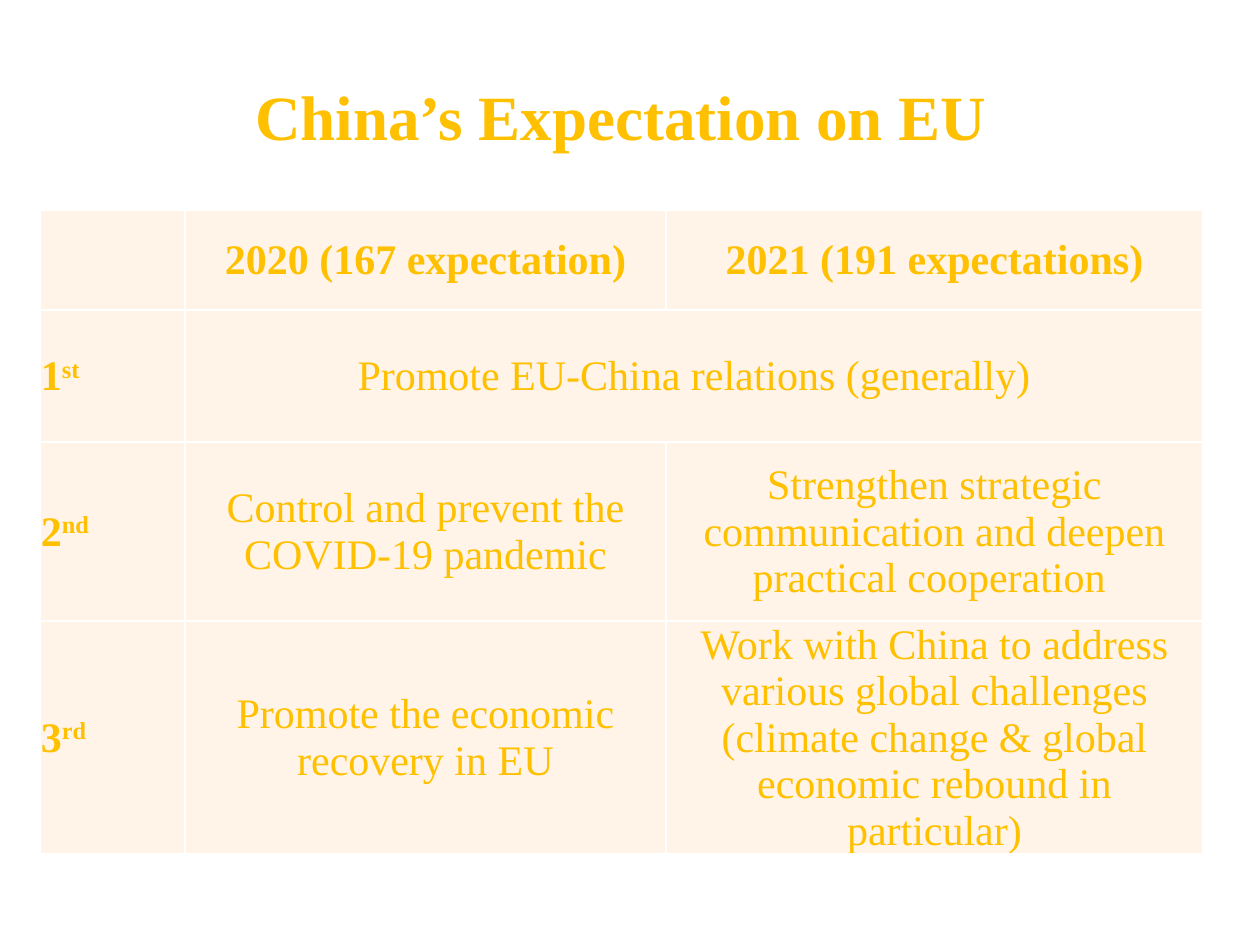
from dataclasses import dataclass

from lxml import etree
from pptx import Presentation
from pptx import util as u
from pptx.dml.color import RGBColor
from pptx.enum import text
from pptx.oxml.ns import qn

EMU_PER_PX = 914400 / 126


@dataclass(frozen=True)
class Theme:
    font: str = "Times New Roman"
    ink: str = "FFC000"
    cell: str = "FFF4E7"
    border: str = "FFFFFF"
    title_size: int = 36
    table_size: int = 24


THEME = Theme()
COLUMNS = [145, 481, 537]
ROWS = [100, 132, 179, 163]
HEADERS = ["2020 (167 expectation)", "2021 (191 expectations)"]
RANKS = [
    ("1", "st", ["Promote EU-China relations (generally)"]),
    ("2", "nd", ["Control and prevent the COVID-19 pandemic",
                 "Strengthen strategic communication and deepen practical cooperation "]),
    ("3", "rd", ["Promote the economic recovery in EU",
                 "Work with China to address various global challenges "
                 "(climate change & global economic rebound in particular)"]),
]


def px(n):
    return u.Emu(round(n * EMU_PER_PX))


def set_all(obj, values):
    for name, value in values.items():
        setattr(obj, name, value)


def add_run(p, words, size, bold, raised=False):
    r = p.add_run()
    r.text = words
    set_all(r.font, {"name": THEME.font, "size": u.Pt(size), "bold": bold})
    r.font.color.rgb = RGBColor.from_string(THEME.ink)
    if raised:
        r.font._element.set("baseline", "30000")


def add_title(s, words):
    sp = s.shapes.title
    set_all(sp, {"left": px(31), "top": px(60), "width": px(1180), "height": px(120)})
    tf = sp.text_frame
    set_all(tf, {"vertical_anchor": text.MSO_ANCHOR.MIDDLE, "word_wrap": True})
    p = tf.paragraphs[0]
    set_all(p, {"alignment": text.PP_ALIGN.CENTER, "line_spacing": 0.9})
    add_run(p, words, THEME.title_size, True)


def add_borders(cell):
    tcPr = cell._tc.get_or_add_tcPr()
    for i, side in enumerate(("lnL", "lnR", "lnT", "lnB")):
        ln = etree.Element(qn(f"a:{side}"), w=str(u.Pt(1)))
        fill = etree.SubElement(ln, qn("a:solidFill"))
        etree.SubElement(fill, qn("a:srgbClr"), val=THEME.border)
        tcPr.insert(i, ln)


def format_cell(cell):
    set_all(cell, {
        "margin_left": px(1), "margin_right": px(1),
        "margin_top": px(1), "margin_bottom": 0,
        "vertical_anchor": text.MSO_ANCHOR.MIDDLE,
    })
    cell.fill.solid()
    cell.fill.fore_color.rgb = RGBColor.from_string(THEME.cell)
    add_borders(cell)


def write_centred(cell, words, bold=False):
    p = cell.text_frame.paragraphs[0]
    p.alignment = text.PP_ALIGN.CENTER
    add_run(p, words, THEME.table_size, bold)


def write_rank(cell, number, suffix):
    p = cell.text_frame.paragraphs[0]
    add_run(p, number, THEME.table_size, True)
    add_run(p, suffix, THEME.table_size, True, raised=True)


def add_expectations(s):
    frame = s.shapes.add_table(len(ROWS), len(COLUMNS), px(40), px(210),
                               px(sum(COLUMNS)), px(sum(ROWS)))
    table = frame.table
    set_all(table, {"first_row": False, "horz_banding": False})
    for column, width in zip(table.columns, COLUMNS):
        column.width = px(width)
    for row, height in zip(table.rows, ROWS):
        row.height = px(height)
    for cell in table.iter_cells():
        format_cell(cell)
    for col, words in enumerate(HEADERS, 1):
        write_centred(table.cell(0, col), words, bold=True)
    for row, (number, suffix, entries) in enumerate(RANKS, 1):
        write_rank(table.cell(row, 0), number, suffix)
        if len(entries) == 1:
            table.cell(row, 1).merge(table.cell(row, 2))
        for col, words in enumerate(entries, 1):
            write_centred(table.cell(row, col), words)


def main():
    prs = Presentation()
    set_all(prs, {"slide_width": px(1260), "slide_height": px(945)})
    s = prs.slides.add_slide(prs.slide_layouts[5])
    add_title(s, "China’s Expectation on EU")
    add_expectations(s)
    prs.save("out.pptx")


if __name__ == "__main__":
    main()
